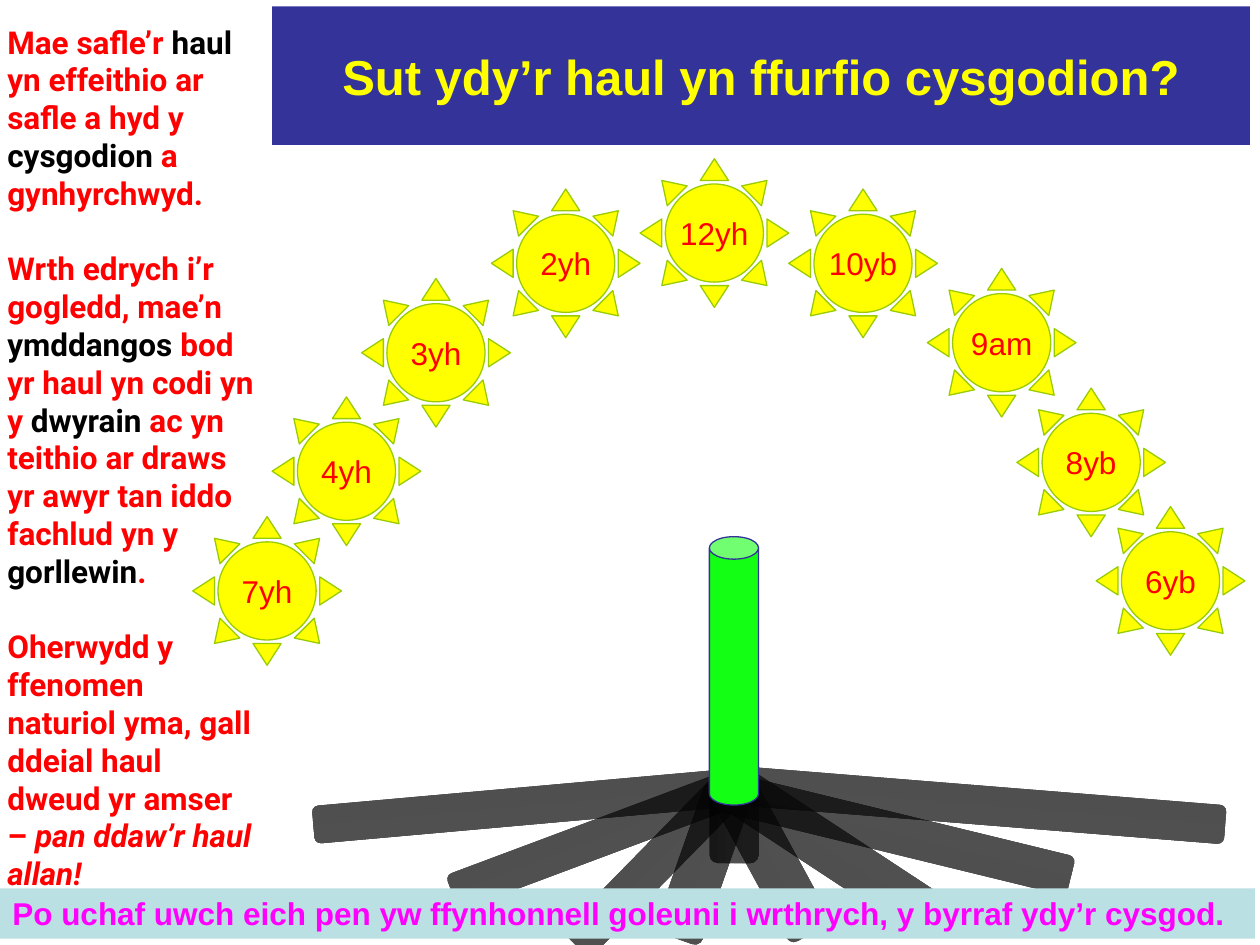
from typing import NamedTuple

from lxml import etree
from pptx import Presentation
from pptx.dml.color import RGBColor
from pptx.enum import shapes, text
from pptx.oxml.ns import qn
from pptx.util import Pt

PX = 9144  # EMU per px, 100 px to the inch
RED, BLACK, YELLOW, NAVY = "FF0000", "000000", "FFFF00", "333399"
SUN_SIZE = 118
Kind = shapes.MSO_SHAPE


class Box(NamedTuple):
    left: int
    top: int
    width: int
    height: int


class Sun(NamedTuple):
    hour: str
    left: int
    top: int


class Shadow(NamedTuple):
    box: Box
    angle: float


class Span(NamedTuple):
    words: str
    color: str = RED
    italic: bool = False


SUNS = [
    Sun("6yb", 870, 402), Sun("8yb", 807, 308), Sun("9am", 736, 213),
    Sun("10yb", 626, 150), Sun("12yh", 508, 126), Sun("2yh", 390, 150),
    Sun("3yh", 287, 221), Sun("4yh", 216, 315), Sun("7yh", 153, 410),
]

SHADOWS = [
    Shadow(Box(571, 623, 402, 31), 4.6),
    Shadow(Box(248, 624, 355, 30), 354.9),
    Shadow(Box(351, 650, 250, 30), 339.5),
    Shadow(Box(429, 668, 186, 31), 314.4),
    Shadow(Box(495, 666, 126, 39), 289.3),
    Shadow(Box(551, 634, 63, 39), 270),
    Shadow(Box(545, 663, 134, 38), 241.4),
    Shadow(Box(555, 654, 202, 38), 213.3),
    Shadow(Box(571, 646, 283, 32), 193.7),
]

EXPLANATION = [
    [Span("Mae safle’r "), Span("haul", BLACK),
     Span(" yn effeithio ar safle a hyd y "), Span("cysgodion", BLACK),
     Span(" a gynhyrchwyd.")],
    [Span("Wrth edrych i’r gogledd, mae’n "), Span("ymddangos", BLACK),
     Span(" bod yr haul yn codi yn y "), Span("dwyrain", BLACK),
     Span(" ac yn teithio ar draws yr awyr tan iddo fachlud yn y "),
     Span("gorllewin", BLACK), Span(".")],
    [Span("Oherwydd y ffenomen naturiol yma, gall ddeial haul dweud yr amser – "),
     Span("pan ddaw’r haul allan!", italic=True)],
]


def rgb(color: str) -> RGBColor:
    return RGBColor.from_string(color)


def emu(box: Box) -> list[int]:
    return [value * PX for value in box]


def add_shape(page, kind, box: Box, fill: str = "", line: str = ""):
    shape = page.shapes.add_shape(kind, *emu(box))
    shape.shadow.inherit = False
    if fill:
        shape.fill.solid()
        shape.fill.fore_color.rgb = rgb(fill)
    if line:
        shape.line.color.rgb = rgb(line)
        shape.line.width = Pt(0.75)
    else:
        shape.line.fill.background()
    return shape


def add_span(para, span: Span, font: str = "Arial", size: int = 18,
             bold: bool = True) -> None:
    run = para.add_run()
    run.text = span.words
    run.font.name = font
    run.font.size = Pt(size)
    run.font.bold = bold
    run.font.italic = span.italic
    run.font.color.rgb = rgb(span.color)


def write_line(shape, span: Span, align, anchor, size: int = 18,
               bold: bool = True, wrap: bool = True) -> None:
    frame = shape.text_frame
    frame.word_wrap = wrap
    frame.vertical_anchor = anchor
    para = frame.paragraphs[0]
    para.alignment = align
    add_span(para, span, size=size, bold=bold)


def draw_shadow(page, shadow: Shadow) -> None:
    shape = add_shape(page, Kind.ROUNDED_RECTANGLE, shadow.box)
    shape.rotation = shadow.angle
    shape.fill.gradient()
    shape.fill.gradient_angle = 270
    for stop, color in zip(shape.fill.gradient_stops, (BLACK, "0C0C0C")):
        stop.color.rgb = rgb(color)
    for color in shape._element.spPr.iter(qn("a:srgbClr")):
        etree.SubElement(color, qn("a:alpha")).set("val", "70000")


def draw_sun(page, sun: Sun) -> None:
    box = Box(sun.left, sun.top, SUN_SIZE, SUN_SIZE)
    shape = add_shape(page, Kind.SUN, box, YELLOW, "99CC00")
    shape.adjustments[0] = 0.17
    write_line(shape, Span(sun.hour), text.PP_ALIGN.CENTER,
               text.MSO_ANCHOR.MIDDLE, bold=False, wrap=False)


def write_explanation(page) -> None:
    frame = page.shapes.add_textbox(*emu(Box(-4, 13, 220, 716))).text_frame
    frame.word_wrap = True
    for index, spans in enumerate(EXPLANATION):
        para = frame.paragraphs[0] if index == 0 else frame.add_paragraph()
        if index:
            para.space_before = Pt(21.6)
        for span in spans:
            add_span(para, span, font="Roboto")


def main() -> None:
    deck = Presentation()
    deck.slide_width, deck.slide_height = 1000 * PX, 750 * PX
    page = deck.slides.add_slide(deck.slide_layouts[6])

    # Title band
    title = add_shape(page, Kind.RECTANGLE, Box(216, 5, 776, 110), NAVY)
    write_line(title, Span("Sut ydy’r haul yn ffurfio cysgodion?", YELLOW),
               text.PP_ALIGN.CENTER, text.MSO_ANCHOR.MIDDLE, size=28)

    # Shadows fanned out behind the post
    for shadow in SHADOWS:
        draw_shadow(page, shadow)
    post = add_shape(page, Kind.CAN, Box(563, 426, 39, 213), "13FF13", NAVY)
    post.adjustments[0] = 0.458

    # Arc of suns through the day
    for sun in SUNS:
        draw_sun(page, sun)

    # Explanation and conclusion
    write_explanation(page)
    footer = add_shape(page, Kind.RECTANGLE, Box(0, 705, 996, 40), "BBE0E3")
    write_line(footer, Span("Po uchaf uwch eich pen yw ffynhonnell goleuni i "
                            "wrthrych, y byrraf ydy’r cysgod.", "FF00FF"),
               text.PP_ALIGN.LEFT, text.MSO_ANCHOR.TOP)

    deck.save("out.pptx")


if __name__ == "__main__":
    main()
